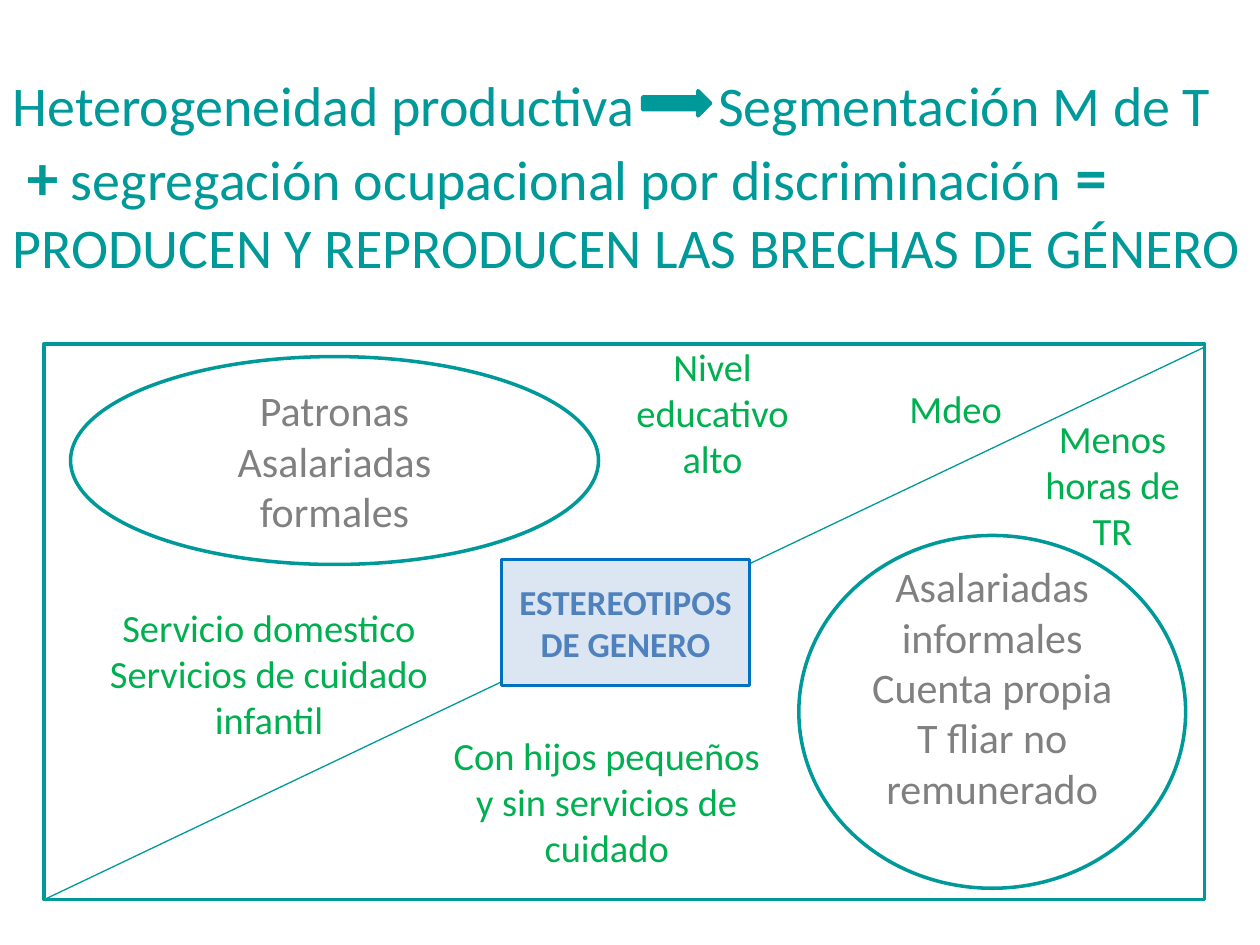
from lxml import etree
from pptx import Presentation
from pptx.dml.color import RGBColor
from pptx.enum.shapes import MSO_CONNECTOR, MSO_SHAPE
from pptx.enum.text import MSO_ANCHOR, MSO_AUTO_SIZE, PP_ALIGN
from pptx.oxml.ns import qn
from pptx.util import Inches, Pt

RECT, OVAL, ARROW = MSO_SHAPE.RECTANGLE, MSO_SHAPE.OVAL, MSO_SHAPE.RIGHT_ARROW
LINE = MSO_CONNECTOR.STRAIGHT
MIDDLE, FIXED = MSO_ANCHOR.MIDDLE, MSO_AUTO_SIZE.NONE
LEFT, CENTER = PP_ALIGN.LEFT, PP_ALIGN.CENTER

TEAL = RGBColor(0x00, 0x99, 0x99)
GRAY = RGBColor(0x80, 0x80, 0x80)
GREEN = RGBColor(0x00, 0xB0, 0x50)
BLUE = RGBColor(0x00, 0x70, 0xC0)
STEEL = RGBColor(0x4F, 0x81, 0xBD)
PALE = RGBColor(0xDC, 0xE6, 0xF2)
FONT = "Calibri"

TITLE = [
    [("Heterogeneidad productiva\tSegmentación M de T", False)],
    [
        (" +", True),
        (" segregación ocupacional por discriminación ", False),
        ("= ", True),
        ("PRODUCEN Y REPRODUCEN LAS BRECHAS DE GÉNERO", False),
    ],
]
TAB = 5.6
FRAME = (0.35, 2.73, 9.21, 4.41)
SPLIT = (0.35, 7.14, 9.57, 2.75)
POINTER = (5.1, 0.72, 0.54, 0.2)
GROUPS = [
    ((0.56, 2.83, 4.19, 1.65), 0.05, "Patronas\nAsalariadas formales"),
    (
        (6.34, 4.25, 3.07, 2.8),
        0.45,
        "Asalariadas informales\nCuenta propia\nT fliar no remunerado",
    ),
]
LABEL_H = 0.82
LABELS = [
    (4.69, 2.86, 1.93, "Nivel educativo alto"),
    (0.76, 4.93, 2.75, "Servicio domestico\nServicios de cuidado infantil"),
    (3.44, 5.95, 2.75, "Con hijos pequeños y sin servicios de cuidado"),
    (6.62, 2.83, 1.93, "Mdeo"),
    (8.08, 3.43, 1.5, "Menos horas de TR"),
]
CORE = ((3.98, 4.44, 1.97, 1), "ESTEREOTIPOS DE GENERO")


def style(run, size, color, bold=False):
    font = run.font
    font.name, font.size, font.bold = FONT, Pt(size), bold
    font.color.rgb = color


def write(shape, text, size, color, bold=False):
    frame = shape.text_frame
    frame.text = text
    frame.word_wrap = True
    frame.vertical_anchor = MIDDLE
    for para in frame.paragraphs:
        para.alignment = CENTER
        for run in para.runs:
            style(run, size, color, bold)


def draw(slide, kind, box, line, fill=None):
    shape = slide.shapes.add_shape(kind, *map(Inches, box))
    shape.shadow.inherit = False
    shape.line.color.rgb = line
    shape.line.width = Pt(2)
    if fill is None:
        shape.fill.background()
    else:
        shape.fill.solid()
        shape.fill.fore_color.rgb = fill
    return shape


def head(slide):
    title = slide.shapes.title
    title.left, title.top = Inches(0), Inches(0.21)
    title.width, title.height = Inches(10), Inches(2.36)
    frame = title.text_frame
    frame.auto_size = FIXED
    frame.word_wrap = True
    frame.vertical_anchor = MIDDLE
    frame.text = "\n".join("" for _ in TITLE)
    for para, parts in zip(frame.paragraphs, TITLE):
        para.alignment = LEFT
        for text, bold in parts:
            run = para.add_run()
            run.text = text
            style(run, 36 if bold else 32, TEAL, bold)
    props = frame.paragraphs[0]._p.get_or_add_pPr()
    tabs = etree.SubElement(props, qn("a:tabLst"))
    etree.SubElement(tabs, qn("a:tab"), pos=str(Inches(TAB)), algn="l")


def main():
    deck = Presentation()
    deck.slide_width, deck.slide_height = Inches(10), Inches(7.5)
    slide = deck.slides.add_slide(deck.slide_layouts[5])

    draw(slide, RECT, FRAME, TEAL)
    split = slide.shapes.add_connector(LINE, *map(Inches, SPLIT))
    split.line.color.rgb = TEAL
    split.line.width = Pt(0.75)
    etree.SubElement(split._element.spPr, qn("a:effectLst"))

    head(slide)
    draw(slide, ARROW, POINTER, TEAL, TEAL)

    for box, inset, text in GROUPS:
        group = draw(slide, OVAL, box, TEAL)
        write(group, text, 24, GRAY)
        group.text_frame.margin_bottom = Inches(inset)

    for x, y, w, text in LABELS:
        label = slide.shapes.add_textbox(*map(Inches, (x, y, w, LABEL_H)))
        write(label, text, 22, GREEN)

    box, text = CORE
    write(draw(slide, RECT, box, BLUE, PALE), text, 20, STEEL, True)
    deck.save("out.pptx")


if __name__ == "__main__":
    main()
